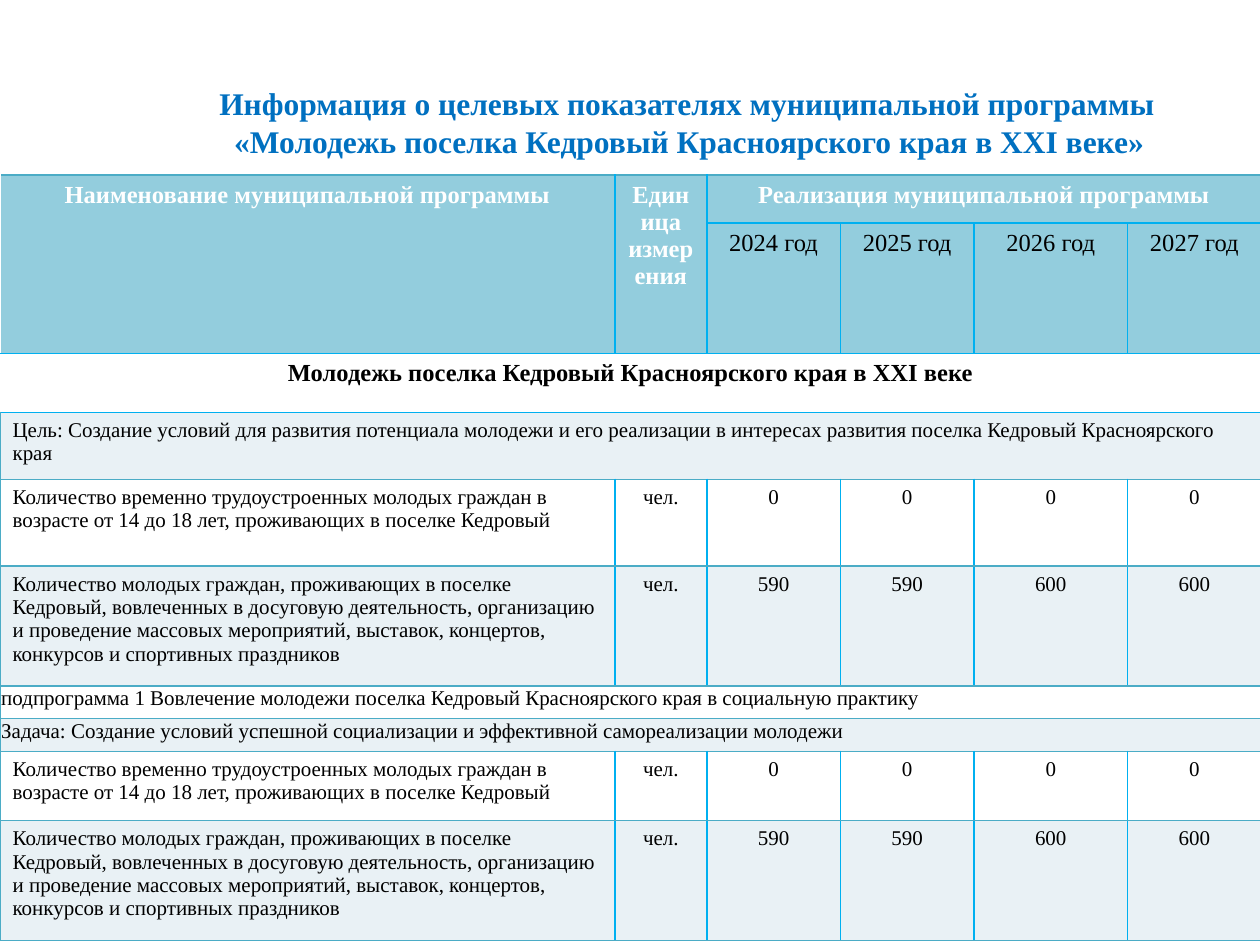
import pptx
import pptx.util
import pptx.dml.color
import pptx.enum.text
import pptx.oxml
import lxml.etree

TITLE = [
    ("Информация о целевых показателях муниципальной программы", "LEFT"),
    ("«Молодежь поселка Кедровый Красноярского края в XXI веке»", "CENTER"),
]
YEARS = [f"{year} год" for year in range(2024, 2028)]
INDICATORS = [
    ["Количество временно трудоустроенных молодых граждан в возрасте от 14 до 18 лет, "
     "проживающих в поселке Кедровый", "чел.", "0", "0", "0", "0"],
    ["Количество молодых граждан, проживающих в поселке Кедровый, вовлеченных в досуговую "
     "деятельность, организацию и проведение массовых мероприятий, выставок, концертов, "
     "конкурсов и спортивных праздников", "чел.", "590", "590", "600", "600"],
]
SPANNING = [
    (2, "Молодежь поселка Кедровый Красноярского края в XXI веке", "section"),
    (3, "Цель: Создание условий для развития потенциала молодежи и его реализации "
        "в интересах развития поселка Кедровый Красноярского края", "label"),
    (6, "подпрограмма 1 Вовлечение молодежи поселка Кедровый Красноярского края "
        "в социальную практику", "tight"),
    (7, "Задача: Создание условий успешной социализации и эффективной самореализации "
        "молодежи", "tight"),
]
HEADER = [
    (0, 0, 2, 1, "Наименование муниципальной программы", "header"),
    (0, 1, 2, 1, "Единица измерения", "header"),
    (0, 2, 1, 4, "Реализация муниципальной программы", "header"),
]
INDICATOR_ROWS = [4, 8]
COLUMNS = [4.88, 0.73, 1.06, 1.06, 1.22, 1.06]
ROWS = [0.38, 0.75, 0.47, 0.53, 0.69, 0.95, 0.26, 0.26, 0.55, 0.95]
HEADER_ROWS = 2

THEME = {
    "font": "Times New Roman",
    "title": {"size": 18, "bold": True, "color": "0070C0"},
    "header": {"size": 14, "bold": True, "color": "FFFFFF", "align": "CENTER"},
    "year": {"size": 14, "bold": False, "color": "000000", "align": "CENTER"},
    "section": {"size": 14, "bold": True, "color": "000000", "align": "CENTER"},
    "label": {"size": 12, "bold": False, "color": "000000", "align": "LEFT"},
    "value": {"size": 12, "bold": False, "color": "000000", "align": "CENTER"},
    "tight": {"size": 12, "bold": False, "color": "000000", "align": "LEFT"},
    "header_fill": "93CDDD",
    "band_fills": ["FFFFFF", "E9F1F5"],
    "inner_line": "00B0F0",
    "outer_line": "4BACC6",
    "line_width": 1,
}
TIGHT_MARGINS = {"margin_left": 0.01, "margin_right": 0.01, "margin_top": 0.01, "margin_bottom": 0}


def write_paragraph(paragraph, text, style, align):
    paragraph.text = text
    paragraph.alignment = getattr(pptx.enum.text.PP_ALIGN, align)
    formats = {"name": THEME["font"], "size": pptx.util.Pt(style["size"]), "bold": style["bold"]}
    for run in paragraph.runs:
        for name, value in formats.items():
            setattr(run.font, name, value)
        run.font.color.rgb = pptx.dml.color.RGBColor.from_string(style["color"])


def draw_border(cell, side, color):
    properties = cell._tc.get_or_add_tcPr()
    line = lxml.etree.SubElement(properties, pptx.oxml.ns.qn(f"a:ln{side}"),
                                 w=str(pptx.util.Pt(THEME["line_width"])))
    fill = lxml.etree.SubElement(line, pptx.oxml.ns.qn("a:solidFill"))
    lxml.etree.SubElement(fill, pptx.oxml.ns.qn("a:srgbClr"), val=color)


def vertical_color(edge, row):
    if edge == 0 and row <= HEADER_ROWS:
        return None
    return THEME["outer_line"] if edge in (0, len(COLUMNS)) else THEME["inner_line"]


def horizontal_color(edge):
    return THEME["inner_line"] if 0 < edge <= HEADER_ROWS + 1 else THEME["outer_line"]


def fill_block(table, row, column, height, width, text, style_name):
    origin = table.cell(row, column)
    if height * width > 1:
        origin.merge(table.cell(row + height - 1, column + width - 1))
    fill_color = (THEME["header_fill"] if row < HEADER_ROWS
                  else THEME["band_fills"][row % 2])
    for r in range(row, row + height):
        for c in range(column, column + width):
            cell = table.cell(r, c)
            edges = [
                ("L", c == column, vertical_color(c, r)),
                ("R", c == column + width - 1, vertical_color(c + 1, r)),
                ("T", r == row, horizontal_color(r)),
                ("B", r == row + height - 1, horizontal_color(r + 1)),
            ]
            for side, on_boundary, color in edges:
                if on_boundary and color:
                    draw_border(cell, side, color)
            cell.fill.solid()
            cell.fill.fore_color.rgb = pptx.dml.color.RGBColor.from_string(fill_color)
    if style_name == "tight":
        for name, value in TIGHT_MARGINS.items():
            setattr(origin, name, pptx.util.Inches(value))
    style = THEME[style_name]
    write_paragraph(origin.text_frame.paragraphs[0], text, style, style["align"])


def table_blocks():
    blocks = list(HEADER)
    blocks += [(1, 2 + i, 1, 1, year, "year") for i, year in enumerate(YEARS)]
    blocks += [(row, 0, 1, len(COLUMNS), text, style) for row, text, style in SPANNING]
    for first_row in INDICATOR_ROWS:
        for row, texts in enumerate(INDICATORS, first_row):
            blocks += [(row, column, 1, 1, text, "value" if column else "label")
                       for column, text in enumerate(texts)]
    return blocks


def add_indicator_table(slide):
    inches = pptx.util.Inches
    table = slide.shapes.add_table(len(ROWS), len(COLUMNS), 0, inches(1.39),
                                   inches(sum(COLUMNS)), inches(sum(ROWS))).table
    for column, width in zip(table.columns, COLUMNS):
        column.width = inches(width)
    for row, height in zip(table.rows, ROWS):
        row.height = inches(height)
    for block in table_blocks():
        fill_block(table, *block)


def write_title(slide):
    title = slide.shapes.title
    place = {"left": 1.64, "top": 0.62, "width": 7.66, "height": 0.71}
    for name, value in place.items():
        setattr(title, name, pptx.util.Inches(value))
    frame = title.text_frame
    formats = {"word_wrap": True, "vertical_anchor": pptx.enum.text.MSO_ANCHOR.TOP,
               "auto_size": pptx.enum.text.MSO_AUTO_SIZE.SHAPE_TO_FIT_TEXT}
    for name, value in formats.items():
        setattr(frame, name, value)
    for index, (text, align) in enumerate(TITLE):
        paragraph = frame.add_paragraph() if index else frame.paragraphs[0]
        write_paragraph(paragraph, text, THEME["title"], align)


def main():
    presentation = pptx.Presentation()
    presentation.slide_width = pptx.util.Inches(10)
    presentation.slide_height = pptx.util.Inches(7.5)
    slide = presentation.slides.add_slide(presentation.slide_layouts[5])
    write_title(slide)
    add_indicator_table(slide)
    presentation.save("out.pptx")


if __name__ == "__main__":
    main()
